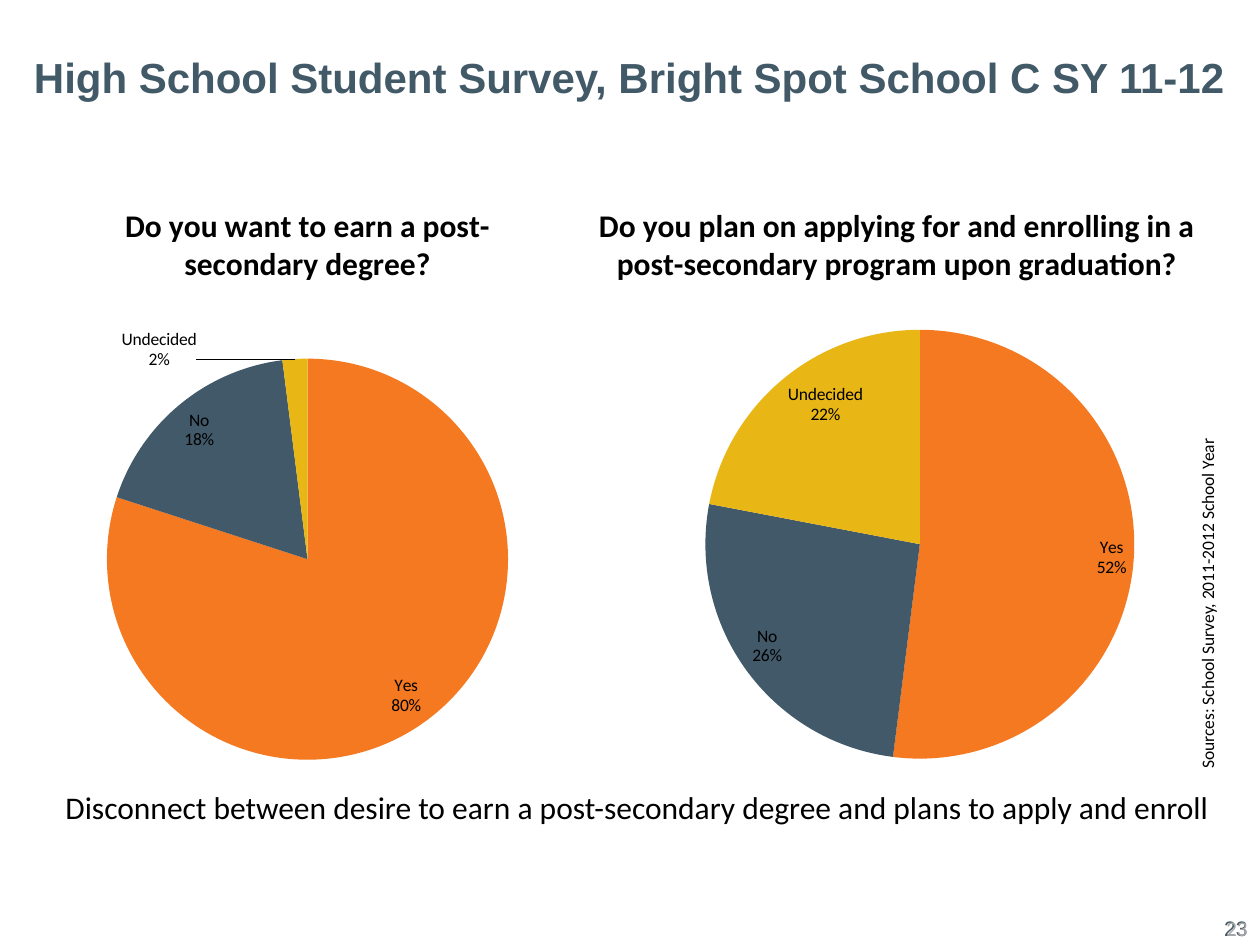
import lxml.etree
import pptx
import pptx.chart.data
import pptx.dml.color
import pptx.enum.chart
import pptx.enum.text
import pptx.oxml
import pptx.oxml.ns
import pptx.util

Cm = pptx.util.Cm
ALIGN = pptx.enum.text.PP_ALIGN
LABEL_AT = pptx.enum.chart.XL_LABEL_POSITION
ANSWER_COLOURS = {"Yes": "F47920", "No": "415968", "Undecided": "E9B715"}
SLATE, GREY, BLACK = "425968", "A6A6A6", "000000"


def colour(hex_string):
    return pptx.dml.color.RGBColor.from_string(hex_string)


def style_font(font, size, hex_string, name="Calibri", bold=False):
    font.name = name
    font.size = pptx.util.Pt(size)
    font.bold = bold
    font.color.rgb = colour(hex_string)


def place(part, box):
    part.left, part.top, part.width, part.height = (Cm(length) for length in box)


def manual_layout(**settings):
    namespace = pptx.oxml.ns.nsdecls("c")
    fields = "".join(f'<c:{key} val="{value}"/>' for key, value in settings.items())
    return pptx.oxml.parse_xml(
        f"<c:layout {namespace}><c:manualLayout>{fields}</c:manualLayout></c:layout>")


def add_title(slide, box, wording):
    title = slide.shapes.title
    place(title, box)
    title.text_frame.text = wording
    title.text_frame.vertical_anchor = pptx.enum.text.MSO_ANCHOR.MIDDLE
    heading = title.text_frame.paragraphs[0]
    heading.alignment = ALIGN.LEFT
    style_font(heading.font, 24, SLATE, "Arial", True)


def add_note(slide, box, wording, size, hex_string=BLACK, name="Calibri",
             alignment=ALIGN.LEFT, rotation=0):
    note = slide.shapes.add_textbox(*(Cm(length) for length in box))
    note.rotation = rotation
    note.text_frame.word_wrap = True
    note.text_frame.text = wording
    line = note.text_frame.paragraphs[0]
    line.alignment = alignment
    style_font(line.font, size, hex_string, name)


def set_label_content(labels):
    for tag, shown in (("showVal", 0), ("showCatName", 1), ("showPercent", 1)):
        labels.find(pptx.oxml.ns.qn(f"c:{tag}")).set("val", str(shown))
    separator = lxml.etree.Element(pptx.oxml.ns.qn("c:separator"))
    separator.text = "\n"
    labels.find(pptx.oxml.ns.qn("c:showBubbleSize")).addnext(separator)


def pull_out_label(series, index, x, y):
    point_label = series.points[index].data_label
    style_font(point_label.font, 10, BLACK)
    point_label.position = LABEL_AT.OUTSIDE_END
    label = series.data_labels._element.find(pptx.oxml.ns.qn("c:dLbl"))
    label.find(pptx.oxml.ns.qn("c:idx")).addnext(manual_layout(x=x, y=y))
    set_label_content(label)


def add_answer_pie(slide, box, question, shares, pie_area, pulled_label=None):
    answers = pptx.chart.data.CategoryChartData(number_format="General")
    answers.categories = list(ANSWER_COLOURS)
    answers.add_series("Series 1", shares)
    chart = slide.shapes.add_chart(
        pptx.enum.chart.XL_CHART_TYPE.PIE,
        *(Cm(length) for length in box), answers).chart
    style_font(chart.font, 10, BLACK)
    chart.has_legend = False
    chart.has_title = True
    chart.chart_title.include_in_layout = False
    chart.chart_title.text_frame.text = question
    style_font(chart.chart_title.text_frame.paragraphs[0].font, 18, BLACK, bold=True)

    x, y, w, h = pie_area
    plot_area = chart._chartSpace.chart.plotArea
    for layout in plot_area.findall(pptx.oxml.ns.qn("c:layout")):
        plot_area.remove(layout)
    plot_area.insert(0, manual_layout(
        layoutTarget="inner", xMode="edge", yMode="edge", x=x, y=y, w=w, h=h))

    plot = chart.plots[0]
    plot.vary_by_categories = True
    series = plot.series[0]
    for index, hex_string in enumerate(ANSWER_COLOURS.values()):
        fill = series.points[index].format.fill
        fill.solid()
        fill.fore_color.rgb = colour(hex_string)
    labels = series.data_labels
    labels.number_format = "0%"
    labels.number_format_is_linked = False
    labels.position = LABEL_AT.INSIDE_END
    style_font(labels.font, 10, BLACK)
    set_label_content(labels._element)
    if pulled_label:
        pull_out_label(series, *pulled_label)


def main():
    deck = pptx.Presentation()
    deck.slide_width, deck.slide_height = Cm(25.4), Cm(19.05)
    slide = deck.slides.add_slide(deck.slide_layouts[5])
    for hex_string, name in ((SLATE, "Arial"), (GREY, "Calibri")):
        add_note(slide, (18.16, 18.34, 7.24, 0.71), "23", 12, hex_string, name,
                 ALIGN.RIGHT)
    add_title(slide, (0.43, -0.05, 24.77, 3.18),
              "High School Student Survey, Bright Spot School C SY 11-12")
    add_answer_pie(slide, (0, 3.61, 12.4, 12.07),
                   "Do you want to earn a post-secondary degree?",
                   (80, 18, 2), (0.17, 0.3, 0.66, 0.67), (2, -0.22, 0.03))
    add_answer_pie(slide, (10.36, 3.61, 15.44, 12.07),
                   "Do you plan on applying for and enrolling in a "
                   "post-secondary program upon graduation?",
                   (52, 26, 22), (0.25, 0.25, 0.56, 0.72))
    add_note(slide, (1.07, 15.77, 23.7, 1.02),
             "Disconnect between desire to earn a post-secondary degree "
             "and plans to apply and enroll", 18)
    add_note(slide, (18.21, 9.27, 12.27, 0.69),
             "Sources: School Survey, 2011-2012 School Year", 10, rotation=270)
    deck.save("out.pptx")


if __name__ == "__main__":
    main()
